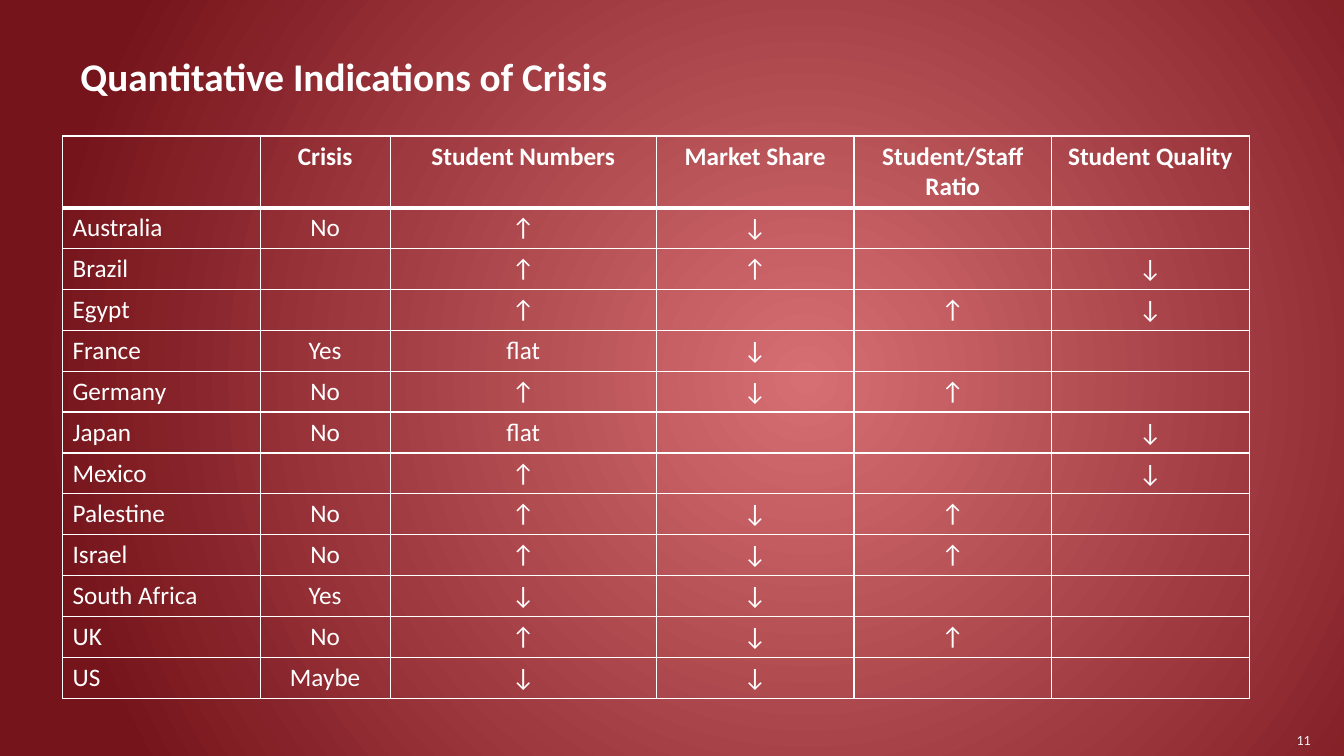
from dataclasses import dataclass

from lxml.etree import SubElement
from pptx import Presentation
from pptx.dml.color import RGBColor
from pptx.enum.text import MSO_ANCHOR, PP_ALIGN
from pptx.oxml.ns import qn
from pptx.util import Inches, Pt


@dataclass(frozen=True)
class Theme:
    """Colours, font and type sizes of the slide."""

    font: str = "Calibri"
    white: str = "FFFFFF"
    page_grey: str = "F2F2F2"
    glow: str = "D66F73"
    edge: str = "76141B"
    title_size: int = 28
    table_size: int = 18
    page_size: int = 10
    thin_line: int = 1
    header_line: int = 3


THEME = Theme()
HEADERS = ("", "Crisis", "Student Numbers", "Market Share", "Student/Staff Ratio", "Student Quality")
COUNTRIES = (
    ("Australia", "No", "↑", "↓", "", ""),
    ("Brazil", "", "↑", "↑", "", "↓"),
    ("Egypt", "", "↑", "", "↑", "↓"),
    ("France", "Yes", "flat", "↓", "", ""),
    ("Germany", "No", "↑", "↓", "↑", ""),
    ("Japan", "No", "flat", "", "", "↓"),
    ("Mexico", "", "↑", "", "", "↓"),
    ("Palestine", "No", "↑", "↓", "↑", ""),
    ("Israel", "No", "↑", "↓", "↑", ""),
    ("South Africa", "Yes", "↓", "↓", "", ""),
    ("UK", "No", "↑", "↓", "↑", ""),
    ("US", "Maybe", "↓", "↓", "", ""),
)
COLUMN_WIDTHS = (1.96, 1.29, 2.64, 1.96, 1.96, 1.96)
HEADER_HEIGHT = 0.7
ROW_HEIGHT = 0.4


def apply_format(target, values):
    """Set each attribute named in values on the target."""
    for name, value in values.items():
        setattr(target, name, value)


def write_text(frame, text, size, color=THEME.white, bold=False, align=PP_ALIGN.LEFT):
    """Write one formatted paragraph into a text frame."""
    paragraph = frame.paragraphs[0]
    paragraph.text = text
    paragraph.alignment = align
    apply_format(paragraph.font, {"name": THEME.font, "size": Pt(size), "bold": bold})
    for run in paragraph.runs:
        apply_format(run.font, {"name": THEME.font, "size": Pt(size), "bold": bold})
        run.font.color.rgb = RGBColor.from_string(color)


def add_text(slide, box, text, size, frame_format=None, **style):
    """Add a wrapping text box at box, given in inches."""
    frame = slide.shapes.add_textbox(*map(Inches, box)).text_frame
    apply_format(frame, {"word_wrap": True, **(frame_format or {})})
    write_text(frame, text, size, **style)


def paint_background(slide):
    """Fill the background with a radial glow right of the centre."""
    fill = slide.background.fill
    fill.gradient()
    for stop, color in zip(fill.gradient_stops, (THEME.glow, THEME.edge)):
        stop.color.rgb = RGBColor.from_string(color)
    linear = next(slide.element.iter(qn("a:lin")))
    gradient = linear.getparent()
    gradient.remove(linear)
    radial = SubElement(gradient, qn("a:path"), path="circle")
    SubElement(radial, qn("a:fillToRect"), l="60000", t="50000", r="40000", b="50000")


def draw_borders(cell, top, bottom):
    """Give a cell white borders with the given top and bottom widths."""
    properties = cell._tc.get_or_add_tcPr()
    widths = {"L": THEME.thin_line, "R": THEME.thin_line, "T": top, "B": bottom}
    for side, width in widths.items():
        line = SubElement(properties, qn(f"a:ln{side}"), w=str(Pt(width)))
        SubElement(SubElement(line, qn("a:solidFill")), qn("a:srgbClr"), val=THEME.white)


def add_indicator_table(slide):
    """Add the table of crisis indicators by country."""
    rows = (HEADERS, *COUNTRIES)
    heights = (HEADER_HEIGHT, *[ROW_HEIGHT] * len(COUNTRIES))
    box = (0.62, 1.35, sum(COLUMN_WIDTHS), sum(heights))
    table = slide.shapes.add_table(len(rows), len(HEADERS), *map(Inches, box)).table
    apply_format(table, {"first_row": False, "horz_banding": False})
    for column, width in zip(table.columns, COLUMN_WIDTHS):
        column.width = Inches(width)
    for row_index, (row, height) in enumerate(zip(rows, heights)):
        table.rows[row_index].height = Inches(height)
        is_header = row_index == 0
        top = THEME.header_line if row_index == 1 else THEME.thin_line
        bottom = THEME.header_line if is_header else THEME.thin_line
        for column_index, text in enumerate(row):
            cell = table.cell(row_index, column_index)
            align = PP_ALIGN.CENTER if column_index else PP_ALIGN.LEFT
            write_text(cell.text_frame, text, THEME.table_size, bold=is_header, align=align)
            draw_borders(cell, top, bottom)
            cell.fill.background()


def main():
    """Build and save the slide."""
    presentation = Presentation()
    apply_format(presentation, {"slide_width": Inches(13.33), "slide_height": Inches(7.5)})
    slide = presentation.slides.add_slide(presentation.slide_layouts[6])
    paint_background(slide)
    add_indicator_table(slide)
    add_text(slide, (0.7, 0.47, 9.06, 0.57), "Quantitative Indications of Crisis",
             THEME.title_size, bold=True)
    margins = dict.fromkeys(("margin_left", "margin_top", "margin_right", "margin_bottom"), 0)
    add_text(slide, (11.89, 7.02, 1.11, 0.4), "11", THEME.page_size,
             {"vertical_anchor": MSO_ANCHOR.BOTTOM, **margins},
             color=THEME.page_grey, align=PP_ALIGN.RIGHT)
    presentation.save("out.pptx")


if __name__ == "__main__":
    main()
